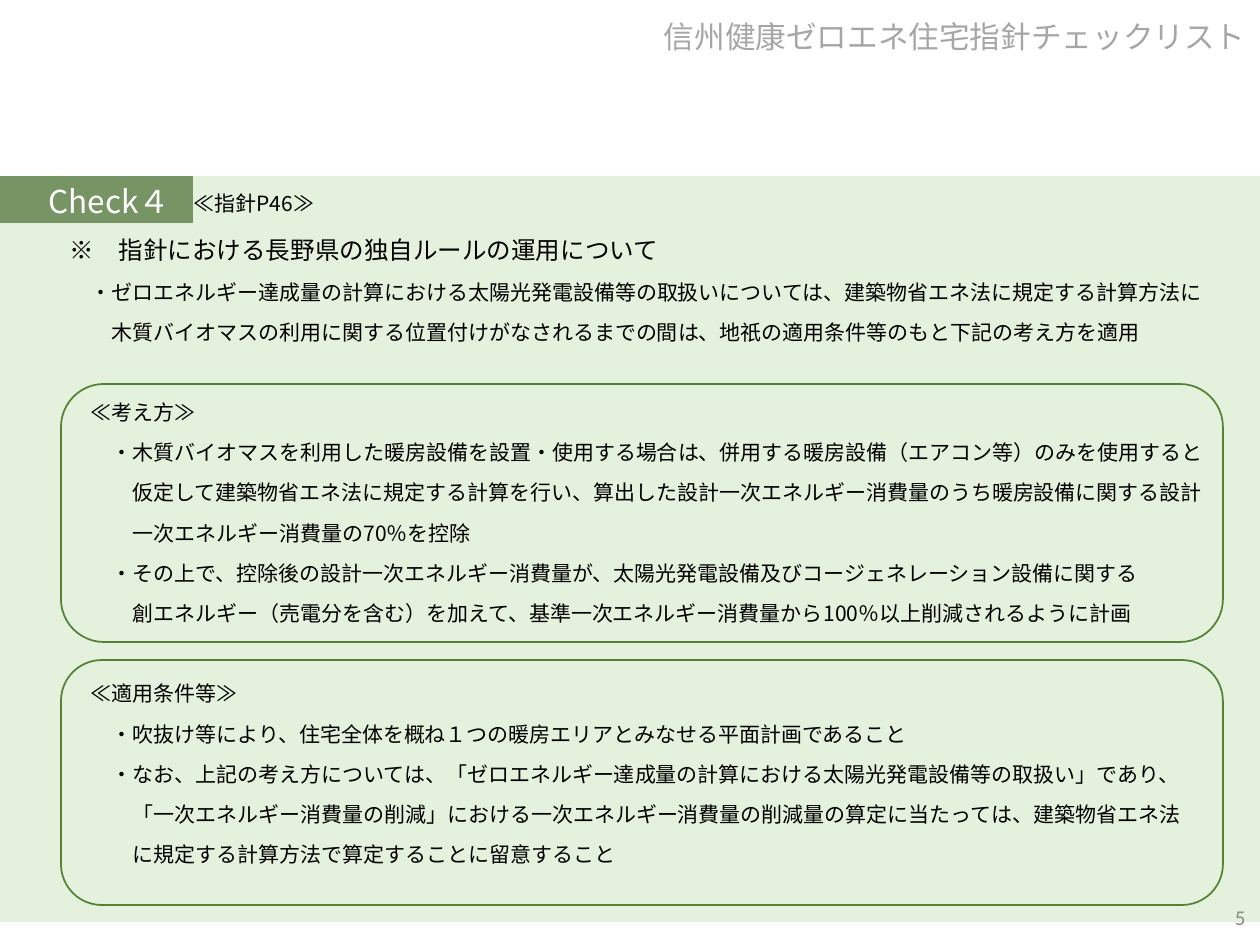
from dataclasses import dataclass

from lxml import etree
from pptx import Presentation
from pptx.dml.color import RGBColor
from pptx.enum.shapes import MSO_SHAPE
from pptx.enum.text import MSO_ANCHOR, MSO_AUTO_SIZE, PP_ALIGN
from pptx.oxml.ns import qn
from pptx.util import Pt

RECT, ROUND = MSO_SHAPE.RECTANGLE, MSO_SHAPE.ROUNDED_RECTANGLE
TOP, MIDDLE = MSO_ANCHOR.TOP, MSO_ANCHOR.MIDDLE
LEFT, CENTER, RIGHT = PP_ALIGN.LEFT, PP_ALIGN.CENTER, PP_ALIGN.RIGHT
NO_FIT = MSO_AUTO_SIZE.NONE

BLACK = RGBColor(0x00, 0x00, 0x00)
WHITE = RGBColor(0xFF, 0xFF, 0xFF)
SILVER = RGBColor(0xA6, 0xA6, 0xA6)
GRAY = RGBColor(0x8C, 0x8C, 0x8C)
DARK = RGBColor(0x38, 0x57, 0x23)
PALE = RGBColor(0xC5, 0xE0, 0xB4)
GREEN = RGBColor(0x54, 0x82, 0x35)

PX = 914400 / 126
GOTHIC = "Noto Sans CJK JP"
STEP = 12  # one full-width character of indent, in points
GAP = 10   # space before a line, in points
BREAK = 33  # space before a new section, in points


@dataclass
class Box:
    x: int
    y: int
    w: int
    h: int

    def emu(self) -> list[int]:
        return [round(n * PX) for n in (self.x, self.y, self.w, self.h)]


@dataclass
class Line:
    text: str
    level: int
    size: int = 12
    color: RGBColor = BLACK
    before: int = GAP


LINES = [
    Line("Check４", 0, 18, WHITE),
    Line("※　指針における長野県の独自ルールの運用について", 1, 14),
    Line("・ゼロエネルギー達成量の計算における太陽光発電設備等の取扱いについては、建築物省エネ法に規定する計算方法に", 2),
    Line("木質バイオマスの利用に関する位置付けがなされるまでの間は、地祇の適用条件等のもと下記の考え方を適用", 3),
    Line("≪考え方≫", 2, before=BREAK),
    Line("・木質バイオマスを利用した暖房設備を設置・使用する場合は、併用する暖房設備（エアコン等）のみを使用すると", 3),
    Line("仮定して建築物省エネ法に規定する計算を行い、算出した設計一次エネルギー消費量のうち暖房設備に関する設計", 4),
    Line("一次エネルギー消費量の70％を控除", 4),
    Line("・その上で、控除後の設計一次エネルギー消費量が、太陽光発電設備及びコージェネレーション設備に関する", 3),
    Line("創エネルギー（売電分を含む）を加えて、基準一次エネルギー消費量から100％以上削減されるように計画", 4),
    Line("≪適用条件等≫", 2, before=BREAK),
    Line("・吹抜け等により、住宅全体を概ね１つの暖房エリアとみなせる平面計画であること", 3),
    Line("・なお、上記の考え方については、「ゼロエネルギー達成量の計算における太陽光発電設備等の取扱い」であり、", 3),
    Line("「一次エネルギー消費量の削減」における一次エネルギー消費量の削減量の算定に当たっては、建築物省エネ法", 4),
    Line("に規定する計算方法で算定することに留意すること", 4),
]


def place(shape, box: Box, anchor=TOP) -> None:
    shape.left, shape.top, shape.width, shape.height = box.emu()
    frame = shape.text_frame
    frame.word_wrap = True
    frame.auto_size = NO_FIT
    frame.vertical_anchor = anchor


def write(para, text: str, *, size: float = 12, color=BLACK, font=GOTHIC,
          align=LEFT, spacing: float = 1.0, before: int = 0,
          level: int = 0) -> None:
    para.alignment = align
    para.line_spacing = spacing
    para.space_before = Pt(before)
    run = para.add_run()
    run.text = text
    run.font.size = Pt(size)
    run.font.name = font
    run.font.color.rgb = color
    east = etree.SubElement(run.font._element, qn("a:ea"))
    east.set("typeface", font)
    # Indent without a bullet
    props = para._p.get_or_add_pPr()
    props.set("marL", str(Pt(STEP * level)))
    props.set("indent", "0")
    etree.SubElement(props, qn("a:buNone"))


def draw(slide, kind, box: Box, fill=None, line=None, alpha: int = 100):
    shape = slide.shapes.add_shape(kind, *box.emu())
    shape.shadow.inherit = False
    if fill is None:
        shape.fill.background()
    else:
        shape.fill.solid()
        shape.fill.fore_color.rgb = fill
        if alpha < 100:
            tone = shape.element.spPr.find(".//" + qn("a:srgbClr"))
            etree.SubElement(tone, qn("a:alpha")).set("val", str(alpha * 1000))
    if line is None:
        shape.line.fill.background()
    else:
        shape.line.color.rgb = line
        shape.line.width = Pt(1)
    return shape


def label(slide, box: Box, text: str, anchor=TOP, **style) -> None:
    shape = slide.shapes.add_textbox(*box.emu())
    place(shape, box, anchor)
    write(shape.text_frame.paragraphs[0], text, **style)


def main() -> None:
    deck = Presentation()
    deck.slide_width, deck.slide_height = Box(0, 0, 1260, 945).emu()[2:]
    slide = deck.slides.add_slide(deck.slide_layouts[1])
    title, body = slide.placeholders

    # Title
    place(title, Box(0, 0, 1259, 77), MIDDLE)
    write(title.text_frame.paragraphs[0], "信州健康ゼロエネ住宅指針チェックリスト",
          size=17.5, color=SILVER, align=RIGHT, spacing=0.9)

    # Heading tab and pale veil, both behind the body
    tab = draw(slide, RECT, Box(0, 176, 193, 47), fill=DARK)
    veil = draw(slide, RECT, Box(0, 176, 1260, 746), fill=PALE, alpha=45)
    for back in (tab, veil):
        body.element.addprevious(back.element)

    # Body lines
    place(body, Box(36, 180, 1187, 742))
    frame = body.text_frame
    for i, row in enumerate(LINES):
        para = frame.add_paragraph() if i else frame.paragraphs[0]
        write(para, row.text, size=row.size, color=row.color,
              spacing=0.9, before=row.before, level=row.level)

    # Section frames
    for y, h in ((660, 245), (384, 258)):
        draw(slide, ROUND, Box(61, y, 1162, h), line=GREEN)

    # Page number and page reference
    label(slide, Box(974, 892, 284, 50), "5", MIDDLE,
          color=GRAY, font="Calibri", align=RIGHT)
    label(slide, Box(171, 184, 166, 38), "≪指針P46≫", align=CENTER)

    deck.save("out.pptx")


if __name__ == "__main__":
    main()
